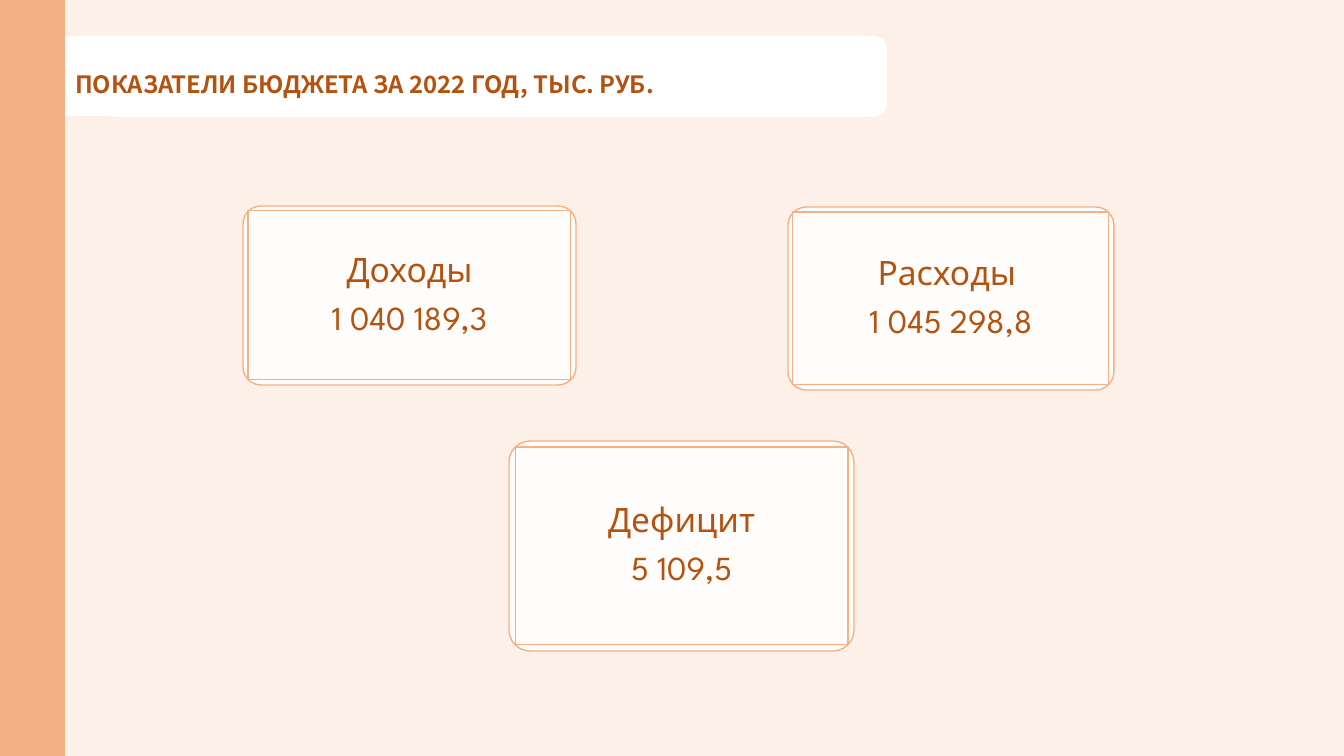
from lxml.etree import SubElement
from pptx import Presentation
from pptx.dml.color import RGBColor
from pptx.enum.shapes import MSO_SHAPE as Shape
from pptx.enum.text import MSO_ANCHOR as Anchor, MSO_AUTO_SIZE as Fit, PP_ALIGN as Align
from pptx.oxml.ns import qn
from pptx.util import Pt

PX = 914400 * 10 // 1008
PEACH = RGBColor(0xF4, 0xB1, 0x83)
CREAM = RGBColor(0xFD, 0xF0, 0xE9)
WHITE = RGBColor(0xFF, 0xFF, 0xFF)
RUST = RGBColor(0xB4, 0x52, 0x10)
CARDS = [
    ((243, 206, 333, 179), "Доходы", "1 040 189,3"),
    ((788, 207, 326, 183), "Расходы ", "1 045 298,8"),
    ((509, 441, 345, 210), "Дефицит", "5 109,5"),
]


def add_box(shapes, kind, box, fill=None, line=None):
    shape = shapes.add_shape(kind, *(n * PX for n in box))
    shape.shadow.inherit = False
    if fill is None:
        shape.fill.background()
    else:
        shape.fill.solid()
        shape.fill.fore_color.rgb = fill
    if line is None:
        shape.line.fill.background()
    else:
        shape.line.color.rgb = PEACH
        shape.line.width = Pt(line)
    return shape


def style(para, font, size, align, pitch, bold=False):
    para.alignment = align
    para.line_spacing = pitch
    for run in para.runs:
        run.font.name = font
        run.font.size = Pt(size)
        run.font.bold = bold
        run.font.color.rgb = RUST


def add_head(slide, box):
    left, top, width, height = box
    add_box(slide.shapes, Shape.ROUNDED_RECTANGLE,
            (left + 37, top, width - 37, height + 1), WHITE)
    title = slide.shapes.title
    title.left, title.top = left * PX, top * PX
    title.width, title.height = (width - 39) * PX, height * PX
    title.fill.solid()
    title.fill.fore_color.rgb = WHITE
    frame = title.text_frame
    frame.text = "ПОКАЗАТЕЛИ БЮДЖЕТА ЗА 2022 ГОД, ТЫС. РУБ."
    frame.auto_size = Fit.NONE
    frame.vertical_anchor = Anchor.TOP
    style(frame.paragraphs[0], "Noto Sans CJK JP", 17, Align.LEFT, 2.0, True)
    slide.shapes._spTree.append(title._element)


def add_card(slide, box, name, value):
    left, top, width, height = box
    group = slide.shapes.add_group_shape()
    back = add_box(group.shapes, Shape.ROUNDED_RECTANGLE, box, WHITE, 1)
    back.adjustments[0] = 0.1
    tint = back._element.spPr.find(qn("a:solidFill"))[0]
    SubElement(tint, qn("a:alpha"), val="90000")
    gap = 5 if height < 200 else 6
    inner = (left + gap, top + gap, width - 2 * gap, height - 2 * gap)
    frame = add_box(group.shapes, Shape.RECTANGLE, inner, line=0.75).text_frame
    frame.text = f"{name}\n{value}"
    frame.word_wrap = True
    frame.vertical_anchor = Anchor.MIDDLE
    frame.margin_left = frame.margin_right = 18 * PX
    frame.margin_top = frame.margin_bottom = 18 * PX
    for para in frame.paragraphs:
        style(para, "League Spartan", 24, Align.CENTER, 0.9)
        para.space_after = Pt(8.4)


def main():
    deck = Presentation()
    deck.slide_width, deck.slide_height = 1344 * PX, 756 * PX
    slide = deck.slides.add_slide(deck.slide_layouts[5])
    slide.background.fill.solid()
    slide.background.fill.fore_color.rgb = CREAM
    add_box(slide.shapes, Shape.RECTANGLE, (0, 0, 65, 756), PEACH)
    add_head(slide, (65, 36, 822, 80))
    for box, name, value in CARDS:
        add_card(slide, box, name, value)
    deck.save("out.pptx")


if __name__ == "__main__":
    main()
